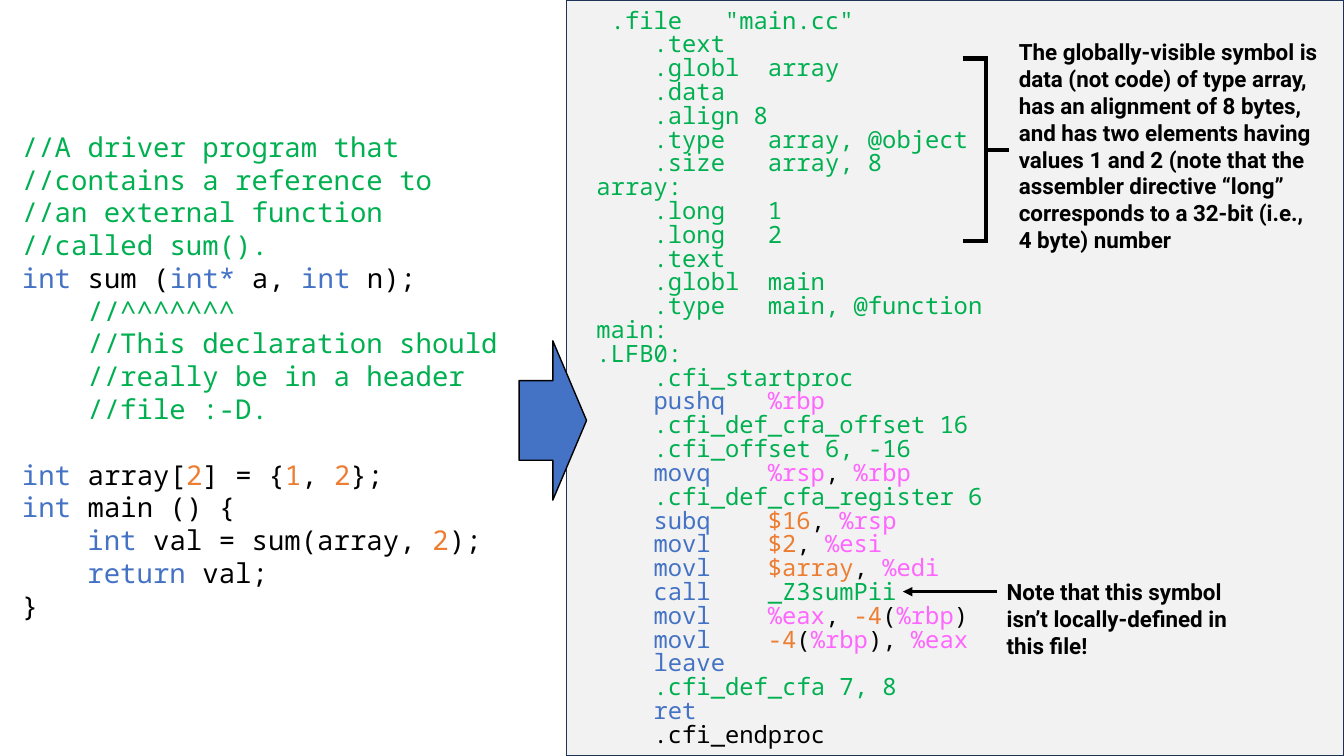
from dataclasses import dataclass, field

from lxml.etree import SubElement
from pptx import Presentation
from pptx.dml.color import RGBColor
from pptx.enum.shapes import MSO_CONNECTOR, MSO_SHAPE
from pptx.enum.text import MSO_AUTO_SIZE
from pptx.oxml.ns import qn
from pptx.util import Pt


@dataclass(frozen=True)
class Theme:
    code_font: str = "Noto Sans Mono"
    note_font: str = "Roboto"
    source_size: float = 19.5
    asm_size: float = 17
    note_size: float = 16
    char_width: float = 0.6  # of the type size, in the code font
    panel: str = "F2F2F2"
    panel_edge: str = "1E3256"
    arrow: str = "4472C4"
    ink: str = "000000"
    # c: comment or directive, k: keyword, n: number, r: register, p: plain
    syntax: dict = field(default_factory=lambda: {
        "c": "00B050", "k": "4472C4", "n": "ED7D31",
        "r": "FF66FF", "p": "000000"})


# Each line is a row of "kind:text" pieces parted by "|".
SOURCE = [
    "c://A driver program that",
    "c://contains a reference to",
    "c://an external function",
    "c://called sum().",
    "k:int|p: sum (|k:int*|p: a, |k:int|p: n);",
    "c:\t//^^^^^^^",
    "c:\t//This declaration should",
    "c:\t//really be in a header",
    "c:\t//file :-D.",
    "k:int|p: array[|n:2|p:] = {|n:1|p:, |n:2|p:};",
    "k:int|p: main () {",
    "k:\tint |p:val = sum(array, |n:2|p:);",
    "k:\treturn |p:val;",
    "p:}",
]
SECOND_BLOCK = 9  # source line that starts after a one-line gap

ASSEMBLY = [
    "c:\t.file\t\"main.cc\"",
    "c:\t.text",
    "c:\t.globl\tarray",
    "c:\t.data",
    "c:\t.align 8",
    "c:\t.type\tarray, @object",
    "c:\t.size\tarray, 8",
    "c:array:",
    "c:\t.long\t1",
    "c:\t.long\t2",
    "c:\t.text",
    "c:\t.globl\tmain",
    "c:\t.type\tmain, @function",
    "c:main:",
    "c:.LFB0:",
    "c:\t.cfi_startproc",
    "k:\tpushq\t|r:%rbp",
    "c:\t.cfi_def_cfa_offset 16",
    "c:\t.cfi_offset 6, -16",
    "k:\tmovq\t|r:%rsp|p:, |r:%rbp",
    "c:\t.cfi_def_cfa_register 6",
    "k:\tsubq\t|n:$16|p:, |r:%rsp",
    "k:\tmovl\t|n:$2|p:, |r:%esi",
    "k:\tmovl\t|n:$array|p:, |r:%edi",
    "k:\tcall\t|c:_Z3sumPii",
    "k:\tmovl\t|r:%eax|p:, |n:-4|p:(|r:%rbp|p:)",
    "k:\tmovl\t|n:-4|p:(|r:%rbp|p:), |r:%eax",
    "k:\tleave",
    "c:\t.cfi_def_cfa 7, 8",
    "k:\tret",
    "p:\t.cfi_endproc",
]

ARRAY_NOTE = ("The globally-visible symbol is data (not code) of type array, "
              "has an alignment of 8 bytes, and has two elements having values "
              "1 and 2 (note that the assembler directive “long” corresponds "
              "to a 32-bit (i.e., 4 byte) number")
CALL_NOTE = "Note that this symbol isn’t locally-defined in this file!"


class Canvas:
    def __init__(self, slide, theme):
        self.slide, self.theme = slide, theme

    def shape(self, kind, box, fill=None, line=None, weight=1):
        sp = self.slide.shapes.add_shape(kind, *map(Pt, box))
        sp.shadow.inherit = False
        if fill:
            sp.fill.solid()
            sp.fill.fore_color.rgb = RGBColor.from_string(fill)
        else:
            sp.fill.background()
        self.stroke(sp.line, line or self.theme.ink, weight)
        return sp

    def stroke(self, line, color, weight):
        line.color.rgb = RGBColor.from_string(color)
        line.width = Pt(weight)

    def text_frame(self, box):
        tf = self.slide.shapes.add_textbox(*map(Pt, box)).text_frame
        tf.word_wrap = True
        tf.auto_size = MSO_AUTO_SIZE.SHAPE_TO_FIT_TEXT
        return tf

    def run(self, p, text, color, **fmt):
        r = p.add_run()
        r.text = text
        r.font.color.rgb = RGBColor.from_string(color)
        for name, value in fmt.items():
            setattr(r.font, name, value)

    def code(self, box, lines, size, formats=None, first_shift=0):
        """Add coloured code; formats maps a line number to paragraph values,
        and first_shift moves the first line's tab stops, in characters."""
        tf = self.text_frame(box)
        for i, line in enumerate(lines):
            p = tf.add_paragraph() if i else tf.paragraphs[0]
            values = {**(formats or {}).get(None, {}),
                      **(formats or {}).get(i, {})}
            for name, value in values.items():
                setattr(p, name, value)
            shift = 0 if i else first_shift
            self.tab_stops(p, [col + shift for col in (4, 12)], size)
            for piece in line.split("|"):
                kind, _, text = piece.partition(":")
                self.run(p, text, self.theme.syntax[kind],
                         name=self.theme.code_font, size=Pt(size))

    def tab_stops(self, p, columns, size):
        tabs = SubElement(p._p.get_or_add_pPr(), qn("a:tabLst"))
        for col in columns:
            pos = Pt(col * size * self.theme.char_width)
            SubElement(tabs, qn("a:tab"), pos=str(int(pos)), algn="l")

    def note(self, box, text):
        t = self.theme
        self.run(self.text_frame(box).paragraphs[0], text, t.ink,
                 name=t.note_font, size=Pt(t.note_size), bold=True)

    def brace(self, box, weight):
        sp = self.shape(MSO_SHAPE.RIGHT_BRACE, box, weight=weight)
        sp.adjustments[0] = 0
        sp.adjustments[1] = 0.5
        SubElement(sp.line._get_or_add_ln(), qn("a:miter"), lim="800000")

    def pointer(self, start, end, weight):
        cx = self.slide.shapes.add_connector(
            MSO_CONNECTOR.STRAIGHT, *map(Pt, start + end))
        self.stroke(cx.line, self.theme.ink, weight)
        SubElement(cx.line._get_or_add_ln(), qn("a:tailEnd"), type="triangle")
        SubElement(cx._element.spPr, qn("a:effectLst"))


def main():
    prs = Presentation()
    prs.slide_width, prs.slide_height = Pt(960), Pt(540)
    t = Theme()
    c = Canvas(prs.slides.add_slide(prs.slide_layouts[6]), t)

    c.code((8.6, 89.3, 363, 361.4), SOURCE, t.source_size,
           {SECOND_BLOCK: {"space_before": Pt(23.4)}})
    c.shape(MSO_SHAPE.RECTANGLE, (404.6, 0, 555.4, 540), t.panel, t.panel_edge)
    c.shape(MSO_SHAPE.RIGHT_ARROW, (370.8, 243.4, 48.2, 113.8), t.arrow)
    c.code((419, 3.6, 416, 540), ASSEMBLY, t.asm_size,
           {None: {"line_spacing": Pt(t.asm_size)}}, first_shift=-3)

    c.brace((687.6, 41.8, 33.1, 130.3), 3)
    c.note((720.7, 23.8, 230.4, 162.7), ARRAY_NOTE)
    c.note((712, 409.7, 185, 65.5), CALL_NOTE)
    c.pointer((712, 422.6), (645, 422.6), 2.25)

    prs.save("out.pptx")


if __name__ == "__main__":
    main()
